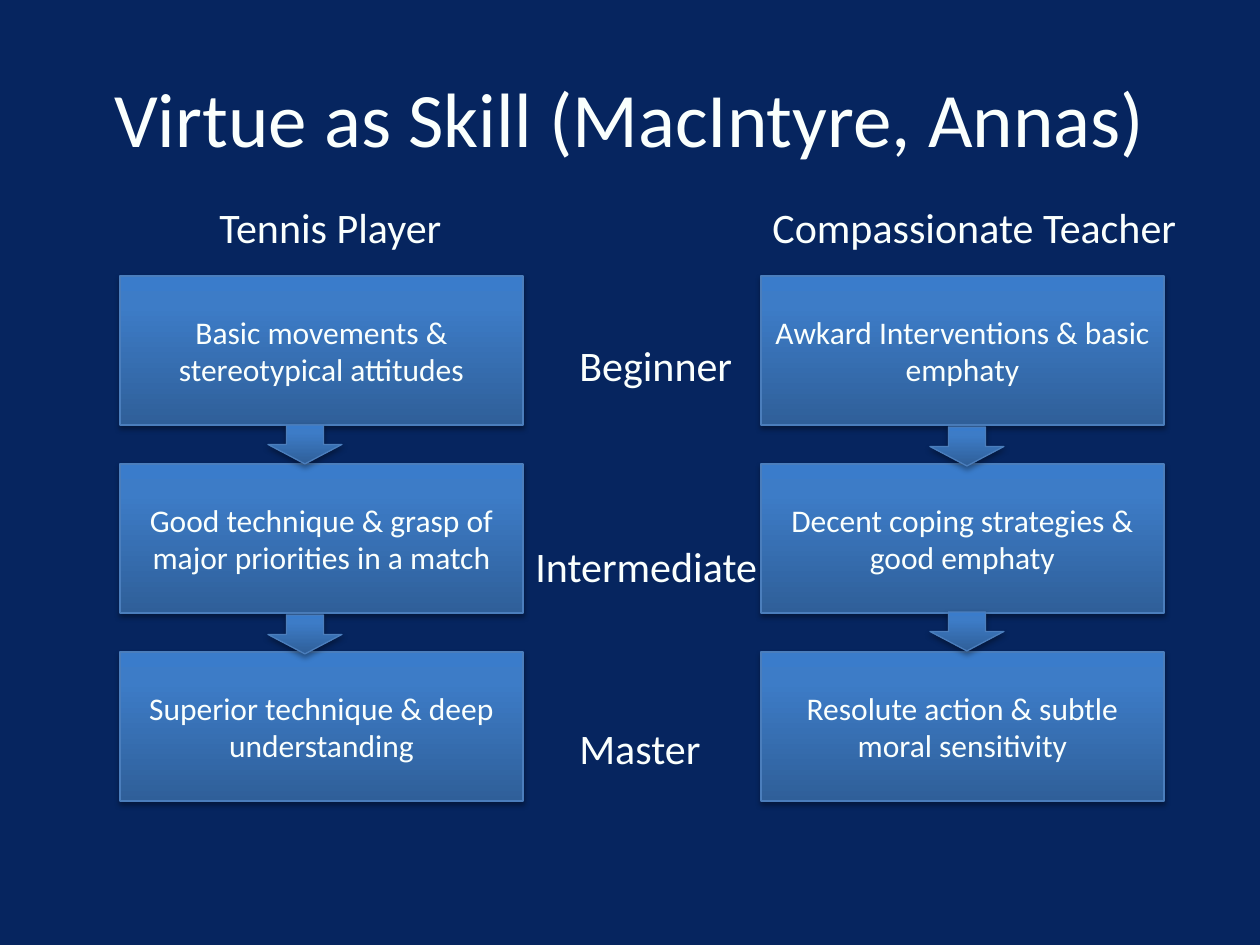
"""Build the slide comparing virtue with skill across three stages."""
from lxml.etree import SubElement
from pptx import Presentation
from pptx.dml.color import RGBColor
from pptx.enum.shapes import MSO_SHAPE
from pptx.enum.text import MSO_ANCHOR, MSO_AUTO_SIZE, PP_ALIGN
from pptx.oxml import parse_xml
from pptx.oxml.ns import nsdecls, qn
from pptx.util import Pt

PX = 914400 // 126
COLORS = {
    "background": "06255F",
    "text": "FAFFFD",
    "outline": "4B7EBC",
    "shadow": "000000",
    "dark": "2F5F99",
    "middle": "3D7CC7",
    "light": "3A7CCB",
}
GRADIENT = [(0, "dark"), (80, "middle"), (100, "light")]

TITLE = ("Virtue as Skill (MacIntyre, Annas)", (63, 38, 1134, 157))
LABELS = [
    ("Beginner", (567, 333, 180, 63)),
    ("Intermediate", (523, 534, 251, 63)),
    ("Master", (567, 716, 149, 63)),
    ("Tennis Player", (207, 195, 255, 63)),
    ("Compassionate Teacher", (760, 195, 437, 63)),
]
COLUMNS = [
    {
        "left": 120,
        "steps": [
            "Basic movements & stereotypical attitudes",
            "Good technique & grasp of major priorities in a match",
            "Superior technique & deep understanding",
        ],
        "arrow_left": 268,
        "arrow_tops": [425, 615],
    },
    {
        "left": 761,
        "steps": [
            "Awkard Interventions & basic emphaty",
            "Decent coping strategies & good emphaty",
            "Resolute action & subtle moral sensitivity",
        ],
        "arrow_left": 930,
        "arrow_tops": [427, 612],
    },
]
STEP_TOP, STEP_PITCH = 276, 188
STEP_SIZE = (403, 149)
ARROW_SIZE = (74, 39)


def color(name):
    return RGBColor.from_string(COLORS[name])


def scaled(place):
    return [value * PX for value in place]


def write(shape, text, size, align, frame_format):
    frame = shape.text_frame
    for name, value in frame_format.items():
        setattr(frame, name, value)
    para = frame.paragraphs[0]
    para.alignment = align
    span = para.add_run()
    span.text = text
    font_format = {"size": Pt(size), "name": "Calibri"}
    for name, value in font_format.items():
        setattr(span.font, name, value)
    span.font.color.rgb = color("text")


def add_text(slide, text, place, size, align, frame_format):
    box = slide.shapes.add_textbox(*scaled(place))
    write(box, text, size, align, frame_format)


def add_glossy(slide, kind, place):
    shape = slide.shapes.add_shape(kind, *scaled(place))
    shape.line.color.rgb = color("outline")
    shape.line.width = Pt(0.75)
    shape.shadow.inherit = False
    properties = shape._element.spPr
    stops = "".join(
        f'<a:gs pos="{position * 1000}"><a:srgbClr val="{COLORS[name]}"/></a:gs>'
        for position, name in GRADIENT
    )
    gradient = parse_xml(
        f'<a:gradFill {nsdecls("a")} rotWithShape="1"><a:gsLst>{stops}</a:gsLst>'
        '<a:lin ang="16200000" scaled="0"/></a:gradFill>'
    )
    properties.find(qn("a:prstGeom")).addnext(gradient)
    shadow = SubElement(
        properties.find(qn("a:effectLst")),
        qn("a:outerShdw"),
        {"blurRad": "40000", "dist": "23000", "dir": "5400000", "rotWithShape": "0"},
    )
    tone = SubElement(shadow, qn("a:srgbClr"), {"val": COLORS["shadow"]})
    SubElement(tone, qn("a:alpha"), {"val": "35000"})
    return shape


def main():
    deck = Presentation()
    deck.slide_width, deck.slide_height = scaled((1260, 945))
    slide = deck.slides.add_slide(deck.slide_layouts[6])
    slide.background.fill.solid()
    slide.background.fill.fore_color.rgb = color("background")

    centred = {"word_wrap": True, "vertical_anchor": MSO_ANCHOR.MIDDLE}
    fitted = {"word_wrap": False, "auto_size": MSO_AUTO_SIZE.SHAPE_TO_FIT_TEXT}
    add_text(slide, *TITLE, 44, PP_ALIGN.CENTER, centred)

    for column in COLUMNS:
        for row, text in enumerate(column["steps"]):
            place = (column["left"], STEP_TOP + row * STEP_PITCH, *STEP_SIZE)
            step = add_glossy(slide, MSO_SHAPE.RECTANGLE, place)
            write(step, text, 18, PP_ALIGN.CENTER, centred)

    for column in COLUMNS:
        for top in column["arrow_tops"]:
            place = (column["arrow_left"], top, *ARROW_SIZE)
            add_glossy(slide, MSO_SHAPE.DOWN_ARROW, place)

    for text, place in LABELS:
        add_text(slide, text, place, 24, PP_ALIGN.LEFT, fitted)

    deck.save("out.pptx")


if __name__ == "__main__":
    main()
